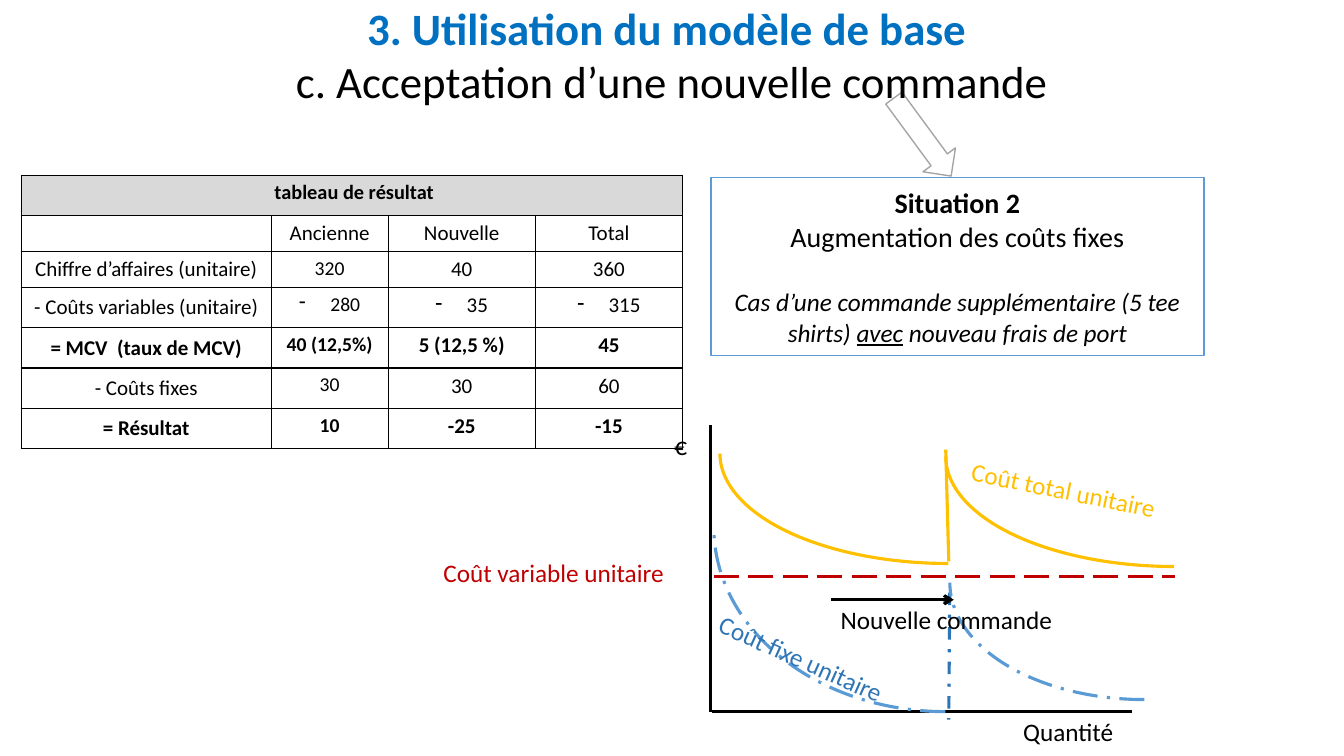
from lxml import etree
from pptx import Presentation
from pptx import util as u
from pptx.dml.color import RGBColor
from pptx.enum import dml, shapes, text
from pptx.oxml import ns

FONT = "Calibri"
BLACK, WHITE, GREY = "000000", "FFFFFF", "D9D9D9"
LIGHT_BLUE, BLUE, TITLE_BLUE = "5B9BD5", "2E75B6", "0070C0"
RED, YELLOW, ARROW_GREY = "C00000", "FFC000", "A5A5A5"
CENTER = text.PP_ALIGN.CENTER
DASH = dml.MSO_LINE

COLUMN_WIDTHS = [2.48, 1.16, 1.46, 1.46]
ROW_HEIGHTS = [0.4, 0.35, 0.35, 0.4, 0.4, 0.4, 0.4]
RESULTS = [
    [" tableau de résultat", "", "", ""],
    ["", "Ancienne", "Nouvelle", "Total"],
    ["Chiffre d’affaires (unitaire)", "320", "40", "360"],
    ["- Coûts variables (unitaire)", "280", "35", "315"],
    ["= MCV  (taux de MCV)", "40 (12,5%)", "5 (12,5 %)", "45"],
    ["- Coûts fixes", "30", "30", "60"],
    ["= Résultat", "10", "-25", "-15"],
]
BOLD_ROWS = (0, 4, 6)
COST_ROW = 3


def rgb(color):
    return RGBColor.from_string(color)


def box(left, top, width, height):
    return [u.Inches(value) for value in (left, top, width, height)]


def add_run(paragraph, words, size, color=BLACK, bold=False, italic=False, underline=False):
    run = paragraph.add_run()
    run.text = words
    font = run.font
    font.name, font.size, font.color.rgb = FONT, u.Pt(size), rgb(color)
    font.bold, font.italic, font.underline = bold, italic, underline


def style_line(line, color, width=2.25, dash=None):
    line.color.rgb = rgb(color)
    line.width = u.Pt(width)
    if dash:
        line.dash_style = dash


def add_outlined(slide, kind, place, color, width, rotation=0, dash=None, fill=None):
    shape = slide.shapes.add_shape(kind, *box(*place))
    shape.shadow.inherit = False
    shape.rotation = rotation
    if fill:
        shape.fill.solid()
        shape.fill.fore_color.rgb = rgb(fill)
    else:
        shape.fill.background()
    style_line(shape.line, color, width, dash)
    return shape


def add_curve(slide, place, color, dash=None):
    add_outlined(slide, shapes.MSO_SHAPE.ARC, place, color, 2.25, 180, dash)


def add_line(slide, start, end, color, dash=None, arrow=False):
    points = [u.Inches(value) for value in (*start, *end)]
    connector = slide.shapes.add_connector(shapes.MSO_CONNECTOR.STRAIGHT, *points)
    style_line(connector.line, color, dash=dash)
    if arrow:
        line = connector.line._get_or_add_ln()
        etree.SubElement(line, ns.qn("a:tailEnd"), type="arrow")
    etree.SubElement(connector._element.spPr, ns.qn("a:effectLst"))


def add_label(slide, words, left, top, width, color=BLACK, rotation=0):
    label = slide.shapes.add_textbox(*box(left, top, width, 0.4))
    label.rotation = rotation
    label.text_frame.word_wrap = True
    add_run(label.text_frame.paragraphs[0], words, 18, color)


def add_title(slide):
    title = slide.shapes.title
    title.left, title.top, title.width, title.height = box(0, -0.18, 13.33, 1.25)
    frame = title.text_frame
    frame.auto_size = text.MSO_AUTO_SIZE.NONE
    frame.word_wrap = True
    frame.vertical_anchor = text.MSO_ANCHOR.BOTTOM
    frame.margin_left = frame.margin_right = frame.margin_bottom = 0
    first, second = frame.paragraphs[0], frame.add_paragraph()
    first.alignment = second.alignment = CENTER
    add_run(first, "3. Utilisation du modèle de base ", 32, TITLE_BLUE, bold=True)
    add_run(second, "c. Acceptation d’une nouvelle commande", 32)
    # Bring the title in front of the arrow
    slide.shapes._spTree.append(title._element)


def add_situation(slide):
    panel = add_outlined(slide, shapes.MSO_SHAPE.RECTANGLE, (7.05, 1.76, 4.89, 1.77),
                         LIGHT_BLUE, 1, fill=WHITE)
    frame = panel.text_frame
    frame.word_wrap = True
    frame.vertical_anchor = text.MSO_ANCHOR.MIDDLE
    heading, subject, case = frame.paragraphs[0], frame.add_paragraph(), frame.add_paragraph()
    for paragraph in frame.paragraphs:
        paragraph.alignment = CENTER
    add_run(heading, "Situation 2", 20, bold=True)
    add_run(subject, "Augmentation des coûts fixes", 20)
    case.space_before = u.Pt(24)
    add_run(case, "Cas d’une commande supplémentaire (5 tee shirts) ", 18, italic=True)
    add_run(case, "avec", 18, italic=True, underline=True)
    add_run(case, " nouveau frais de port", 18, italic=True)


def set_borders(cell):
    properties = cell._tc.get_or_add_tcPr()
    for position, side in enumerate(("a:lnL", "a:lnR", "a:lnT", "a:lnB")):
        line = etree.Element(ns.qn(side), w=str(u.Pt(1)))
        fill = etree.SubElement(line, ns.qn("a:solidFill"))
        etree.SubElement(fill, ns.qn("a:srgbClr"), val=BLACK)
        properties.insert(position, line)


def set_dash_bullet(paragraph):
    properties = paragraph._p.get_or_add_pPr()
    indent = u.Inches(0.31)
    properties.set("marL", str(indent))
    properties.set("indent", str(-indent))
    etree.SubElement(properties, ns.qn("a:buChar"), char="-")


def fill_cell(cell, words, row, column):
    if row == 0:
        cell.fill.solid()
        cell.fill.fore_color.rgb = rgb(GREY)
    else:
        cell.fill.background()
    set_borders(cell)
    if not words:
        cell.margin_top = cell.margin_bottom = 0
        return
    if column == 0 and row >= COST_ROW:
        cell.vertical_anchor = text.MSO_ANCHOR.MIDDLE
    paragraph = cell.text_frame.paragraphs[0]
    paragraph.alignment = CENTER
    if row == COST_ROW and column > 0:
        set_dash_bullet(paragraph)
    size = 14.5 if row == 0 else 14 if column == 1 and row > 1 else 15
    add_run(paragraph, words, size, bold=row in BOLD_ROWS)


def add_results(slide):
    place = box(0.21, 1.74, sum(COLUMN_WIDTHS), sum(ROW_HEIGHTS))
    table = slide.shapes.add_table(len(ROW_HEIGHTS), len(COLUMN_WIDTHS), *place).table
    table.first_row = table.horz_banding = False
    for column, width in zip(table.columns, COLUMN_WIDTHS):
        column.width = u.Inches(width)
    for row, height in zip(table.rows, ROW_HEIGHTS):
        row.height = u.Inches(height)
    table.cell(0, 0).merge(table.cell(0, 3))
    for row, entries in enumerate(RESULTS):
        for column, words in enumerate(entries):
            fill_cell(table.cell(row, column), words, row, column)


def add_cost_diagram(slide):
    # Axes
    add_line(slide, (7.05, 4.22), (7.05, 7.06), BLACK)
    add_line(slide, (11.23, 7.06), (7.06, 7.06), BLACK)
    add_label(slide, "Quantité", 10.05, 7.06, 1.42)
    add_label(slide, "€", 6.59, 4.22, 0.46)
    # Fixed cost per unit
    add_curve(slide, (7.08, 3.41, 4.59, 3.65), LIGHT_BLUE, DASH.LONG_DASH_DOT)
    add_line(slide, (9.42, 5.88), (9.41, 7.14), BLUE, DASH.DASH_DOT)
    add_curve(slide, (9.42, 4.62, 3.86, 2.32), LIGHT_BLUE, DASH.LONG_DASH_DOT)
    add_label(slide, "Coût fixe unitaire", 6.95, 6.46, 2.56, BLUE, 24.1)
    # Variable cost per unit
    add_line(slide, (7.08, 5.72), (11.65, 5.72), RED, DASH.LONG_DASH)
    add_label(slide, "Coût variable unitaire", 4.3, 5.48, 2.56, RED)
    # Total cost per unit
    add_curve(slide, (7.14, 3.41, 4.53, 2.18), YELLOW)
    add_line(slide, (9.38, 4.46), (9.41, 5.57), YELLOW)
    add_curve(slide, (9.38, 3.44, 4.53, 2.18), YELLOW)
    add_label(slide, "Coût total unitaire", 9.52, 4.71, 2.56, YELLOW, 11.5)
    # New order
    add_label(slide, "Nouvelle commande", 8.24, 5.95, 2.44)
    add_line(slide, (8.24, 5.95), (9.46, 5.95), BLACK, arrow=True)


def main():
    presentation = Presentation()
    presentation.slide_width, presentation.slide_height = u.Inches(13.33), u.Inches(7.5)
    slide = presentation.slides.add_slide(presentation.slide_layouts[5])
    add_outlined(slide, shapes.MSO_SHAPE.DOWN_ARROW, (8.95, 0.88, 0.4, 0.96),
                 ARROW_GREY, 1, 323.7, fill=WHITE)
    add_cost_diagram(slide)
    add_title(slide)
    add_situation(slide)
    add_results(slide)
    presentation.save("out.pptx")


if __name__ == "__main__":
    main()
